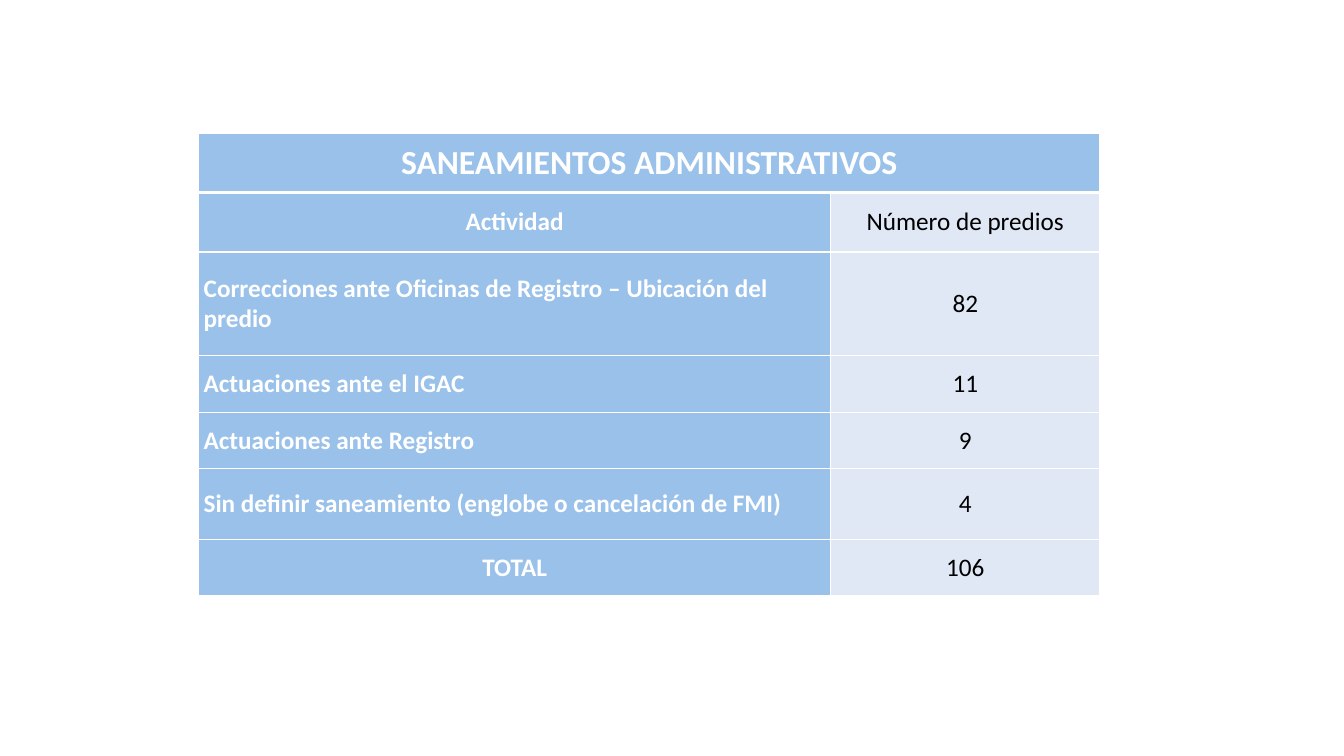
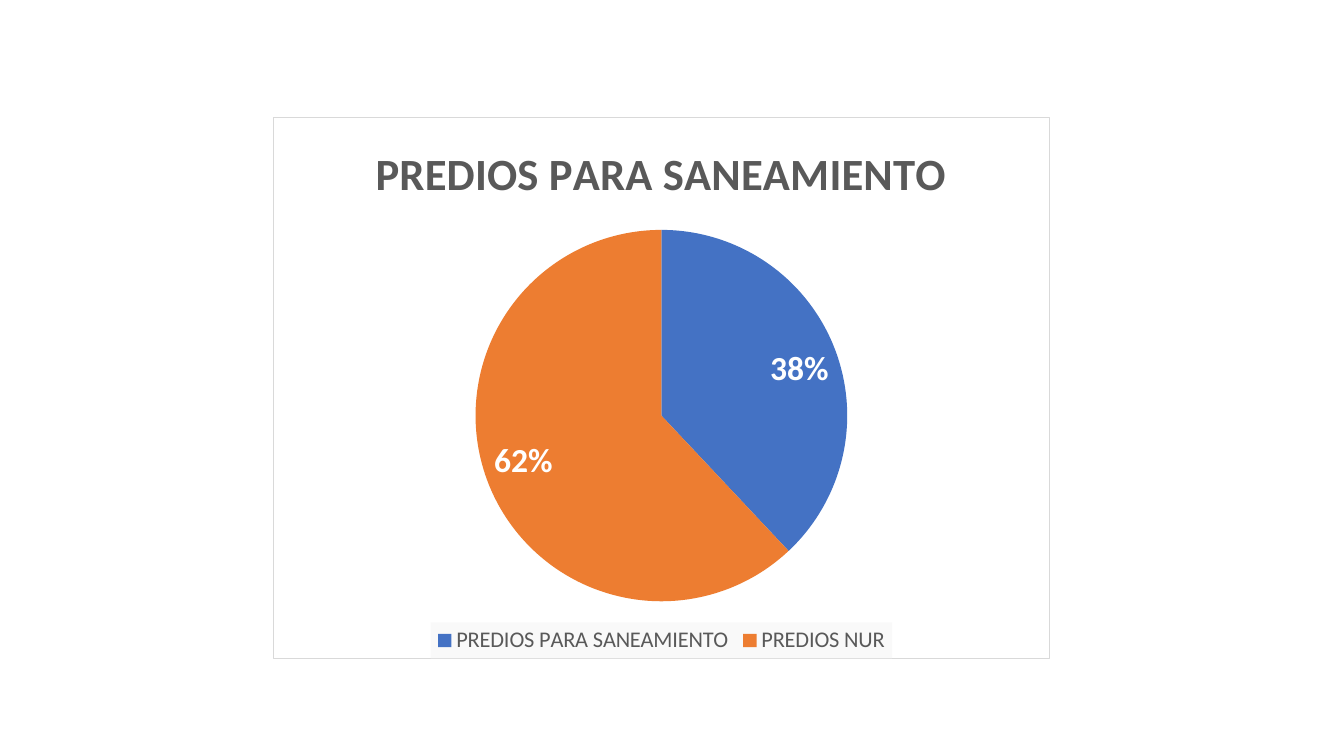
from lxml import etree
from pptx import Presentation
from pptx.chart.data import CategoryChartData
from pptx.dml.color import RGBColor
from pptx.enum.chart import XL_CHART_TYPE, XL_LABEL_POSITION, XL_LEGEND_POSITION
from pptx.enum.text import MSO_ANCHOR, PP_ALIGN
from pptx.oxml import parse_xml
from pptx.oxml.ns import nsdecls, qn
from pptx.util import Inches, Pt

FONT = "Calibri"
COLORS = {
    "label": "0066CC", "value": "B4C7E7", "white": "FFFFFF", "black": "000000",
    "gray": "595959", "frame": "D9D9D9", "legend": "F2F2F2",
    "blue": "4472C4", "orange": "ED7D31",
}

TABLE_TITLE = "SANEAMIENTOS ADMINISTRATIVOS"
TABLE_ROWS = [
    ("Actividad", "Número de predios"),
    ("Correcciones ante Oficinas de Registro – Ubicación del predio", "82"),
    ("Actuaciones ante el IGAC", "11"),
    ("Actuaciones ante Registro", "9"),
    ("Sin definir saneamiento (englobe o cancelación de FMI)", "4"),
    ("TOTAL", "106"),
]
COL_WIDTHS = [6.27, 2.67]
ROW_HEIGHTS = [0.59, 0.59, 1.03, 0.56, 0.56, 0.7, 0.56]

CHART_TITLE = "PREDIOS PARA SANEAMIENTO"
SHARES = [("PREDIOS PARA SANEAMIENTO", 38, "blue"), ("PREDIOS NUR", 62, "orange")]


def style_font(font, size, color, bold=False):
    font.name, font.size, font.bold = FONT, Pt(size), bold
    font.color.rgb = RGBColor.from_string(COLORS[color])


def write_text(tf, text, size=18, color="white", bold=True, align=PP_ALIGN.CENTER):
    p = tf.paragraphs[0]
    p.alignment = align
    r = p.add_run()
    r.text = text
    style_font(r.font, size, color, bold)


def fill_cell(cell, color, top=1, bottom=1):
    """Give a cell a 40 % opaque fill, white borders and narrow margins."""
    cell.vertical_anchor = MSO_ANCHOR.MIDDLE
    cell.margin_left = cell.margin_right = Inches(0.05)
    cell.margin_top = cell.margin_bottom = 0
    cell.fill.solid()
    cell.fill.fore_color.rgb = RGBColor.from_string(COLORS[color])
    props = cell._tc.tcPr
    etree.SubElement(props.find(".//" + qn("a:srgbClr")), qn("a:alpha"), val="40000")
    for i, (side, width) in enumerate([("L", 1), ("R", 1), ("T", top), ("B", bottom)]):
        props.insert(i, parse_xml(
            f'<a:ln{side} {nsdecls("a")} w="{Pt(width)}"><a:solidFill>'
            f'<a:srgbClr val="{COLORS["white"]}"/></a:solidFill></a:ln{side}>'))


def area_format(fill, alpha=100, line=None):
    """Return the fill and outline element of a chart part."""
    outline = (f'<a:ln w="{Pt(0.75)}"><a:solidFill><a:srgbClr val="{COLORS[line]}"/>'
               '</a:solidFill></a:ln>') if line else "<a:ln><a:noFill/></a:ln>"
    return parse_xml(
        f'<c:spPr {nsdecls("c", "a")}><a:solidFill><a:srgbClr val="{COLORS[fill]}">'
        f'<a:alpha val="{alpha * 1000}"/></a:srgbClr></a:solidFill>{outline}</c:spPr>')


def add_activity_table(s):
    table = s.shapes.add_table(
        len(ROW_HEIGHTS), len(COL_WIDTHS), Inches(1.97), Inches(1.32),
        Inches(sum(COL_WIDTHS)), Inches(sum(ROW_HEIGHTS))).table
    for column, width in zip(table.columns, COL_WIDTHS):
        column.width = Inches(width)
    for row, height in zip(table.rows, ROW_HEIGHTS):
        row.height = Inches(height)

    for cell in table.rows[0].cells:
        fill_cell(cell, "label", bottom=3)
    table.cell(0, 0).merge(table.cell(0, 1))
    write_text(table.cell(0, 0).text_frame, TABLE_TITLE, size=24)

    centred = (TABLE_ROWS[0], TABLE_ROWS[-1])
    for i, row in enumerate(TABLE_ROWS, 1):
        label, value = table.cell(i, 0), table.cell(i, 1)
        top = 3 if i == 1 else 1
        fill_cell(label, "label", top=top)
        fill_cell(value, "value", top=top)
        write_text(label.text_frame, row[0],
                   align=PP_ALIGN.CENTER if row in centred else PP_ALIGN.LEFT)
        write_text(value.text_frame, row[1], color="black", bold=False)


def add_share_chart(s):
    data = CategoryChartData()
    data.categories = [name for name, _, _ in SHARES]
    data.add_series("Series 1", [share for _, share, _ in SHARES])
    chart = s.shapes.add_chart(XL_CHART_TYPE.PIE, Inches(2.71), Inches(1.16),
                               Inches(7.7), Inches(5.38), data).chart
    style_font(chart.font, 10, "black")
    chart._chartSpace.find(qn("c:chart")).addnext(area_format("white", line="frame"))

    chart.has_title = True
    write_text(chart.chart_title.text_frame, CHART_TITLE, size=32, color="gray")
    chart.chart_title.include_in_layout = False

    chart.has_legend = True
    legend = chart.legend
    legend.position = XL_LEGEND_POSITION.BOTTOM
    legend.include_in_layout = False
    style_font(legend.font, 16, "gray")
    legend._element.find(qn("c:txPr")).addprevious(area_format("legend", alpha=39))

    plot = chart.plots[0]
    plot.vary_by_categories = True
    series = plot.series[0]
    for i, (_, _, color) in enumerate(SHARES):
        fill = series.points[i].format.fill
        fill.solid()
        fill.fore_color.rgb = RGBColor.from_string(COLORS[color])
    labels = series.data_labels
    labels.show_percentage, labels.show_value = True, False
    labels.number_format, labels.number_format_is_linked = "0%", False
    labels.position = XL_LABEL_POSITION.INSIDE_END
    style_font(labels.font, 24, "white", bold=True)


def main():
    prs = Presentation()
    prs.slide_width, prs.slide_height = Inches(13.33), Inches(7.5)
    blank = prs.slide_layouts[6]
    for build in (add_activity_table, add_share_chart):
        build(prs.slides.add_slide(blank))
    prs.save("out.pptx")


if __name__ == "__main__":
    main()
